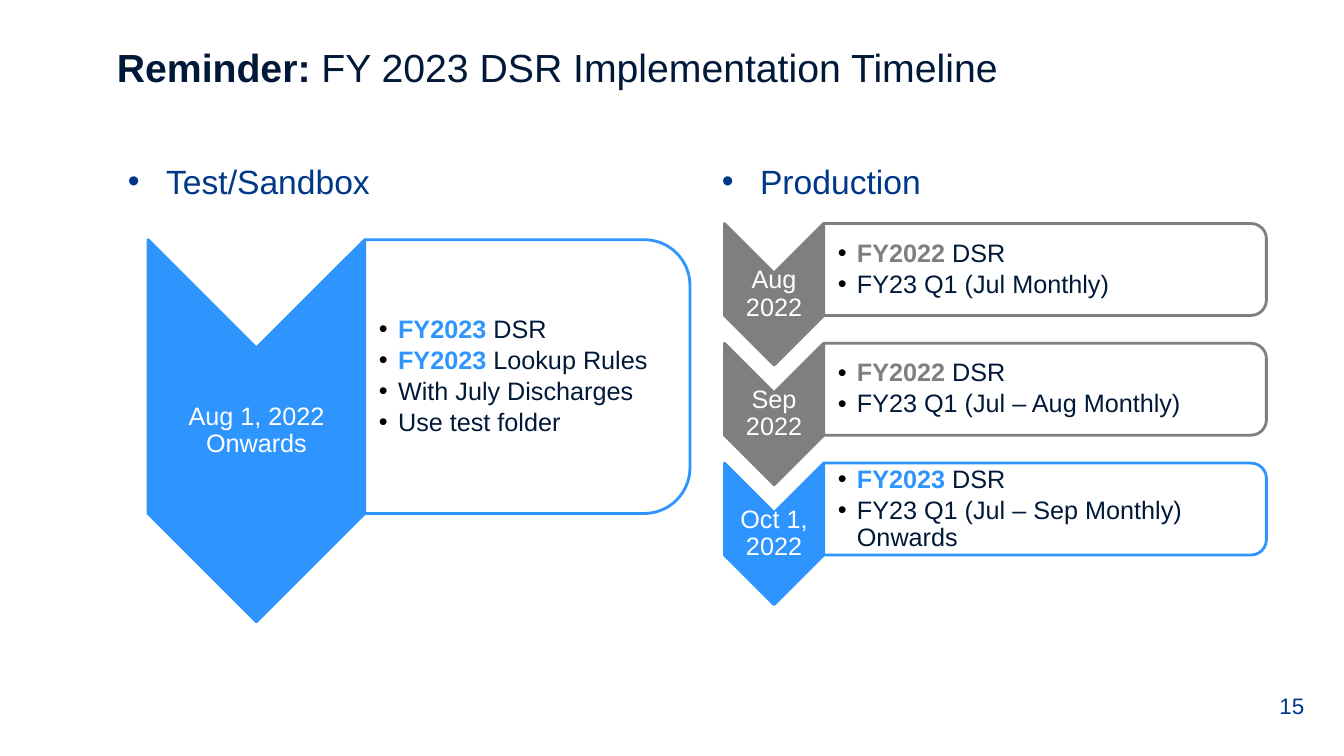
from dataclasses import dataclass

import lxml.etree
import pptx
import pptx.dml.color
import pptx.enum.shapes
import pptx.enum.text
import pptx.oxml.ns
import pptx.util

SHAPES = pptx.enum.shapes.MSO_SHAPE
ALIGN = pptx.enum.text.PP_ALIGN
ANCHOR = pptx.enum.text.MSO_ANCHOR


@dataclass(frozen=True)
class Theme:
    font: str = "Arial"
    ink: str = "001938"
    navy: str = "003889"
    blue: str = "2E95FF"
    gray: str = "7F7F7F"
    white: str = "FFFFFF"
    black: str = "000000"
    title_size: int = 28
    heading_size: int = 24
    step_size: int = 18
    number_size: int = 16
    outline: int = 2


@dataclass(frozen=True)
class Box:
    left: float
    top: float
    width: float
    height: float

    def share(self, left, top, width, height):
        """Return an inner box given in percent of this one."""
        return Box(self.left + self.width * left / 100,
                   self.top + self.height * top / 100,
                   self.width * width / 100, self.height * height / 100)

    def inset(self, margin):
        return Box(self.left, self.top + margin,
                   self.width - margin, self.height - 2 * margin)

    def place(self, shape):
        shape.left, shape.top, shape.width, shape.height = (
            pptx.util.Inches(length)
            for length in (self.left, self.top, self.width, self.height))


THEME = Theme()
SLIDE = Box(0, 0, 13.33, 7.5)
CORNER = 0.167  # radius as a share of the card's short side
CORNER_INSET = 0.29  # share of the radius that keeps text clear of the corner


def color(value):
    return pptx.dml.color.RGBColor.from_string(value)


def add_run(paragraph, text, size, value, bold=False):
    run = paragraph.add_run()
    run.text = text
    run.font.name = THEME.font
    run.font.size = pptx.util.Pt(size)
    run.font.bold = bold
    run.font.color.rgb = color(value)


def add_bullet(paragraph, indent, hanging, value):
    properties = paragraph._p.get_or_add_pPr()
    properties.set("marL", str(pptx.util.Inches(indent)))
    properties.set("indent", str(-pptx.util.Inches(hanging)))
    qualified = pptx.oxml.ns.qn
    bullet_color = lxml.etree.SubElement(properties, qualified("a:buClr"))
    lxml.etree.SubElement(bullet_color, qualified("a:srgbClr"), val=value)
    lxml.etree.SubElement(properties, qualified("a:buFont"), typeface=THEME.font)
    lxml.etree.SubElement(properties, qualified("a:buChar"), char="•")


def add_text_box(slide, box, anchor=ANCHOR.TOP, margins=(0.1, 0.05, 0.1, 0.05)):
    shape = slide.shapes.add_textbox(0, 0, 0, 0)
    box.place(shape)
    frame = shape.text_frame
    frame.word_wrap = True
    frame.vertical_anchor = anchor
    (frame.margin_left, frame.margin_top,
     frame.margin_right, frame.margin_bottom) = map(pptx.util.Inches, margins)
    return frame


def add_turned_shape(slide, kind, box, adjustments, fill, line):
    """Add a shape turned by 90 degrees that fills the box as seen."""
    shape = slide.shapes.add_shape(kind, 0, 0, 0, 0)
    Box(box.left + (box.width - box.height) / 2,
        box.top + (box.height - box.width) / 2,
        box.height, box.width).place(shape)
    shape.rotation = 90
    for index, adjustment in enumerate(adjustments):
        shape.adjustments[index] = adjustment
    shape.shadow.inherit = False
    shape.fill.solid()
    shape.fill.fore_color.rgb = color(fill)
    shape.line.color.rgb = color(line)
    shape.line.width = pptx.util.Pt(THEME.outline)


def add_title(slide, box, lead, rest):
    title = slide.shapes.title
    box.place(title)
    frame = title.text_frame
    frame.auto_size = pptx.enum.text.MSO_AUTO_SIZE.NONE
    frame.vertical_anchor = ANCHOR.TOP
    paragraph = frame.paragraphs[0]
    paragraph.alignment = ALIGN.LEFT
    add_run(paragraph, lead, THEME.title_size, THEME.ink, bold=True)
    add_run(paragraph, rest, THEME.title_size, THEME.ink)


def add_heading(slide, box, text):
    paragraph = add_text_box(slide, box).paragraphs[0]
    add_bullet(paragraph, 0.49, 0.38, THEME.navy)
    paragraph.line_spacing = 1.14
    add_run(paragraph, text, THEME.heading_size, THEME.navy)


def add_step(slide, box, label_share, accent, label, items):
    """Draw a dated chevron whose tip hangs below the box, and its card."""
    label_width = box.width * label_share / 100
    notch = label_width / 2
    chevron = Box(box.left, box.top, label_width, box.height + notch)
    add_turned_shape(slide, SHAPES.CHEVRON, chevron, [0.5], accent, accent)

    label_box = Box(box.left, box.top + notch, label_width, box.height - notch)
    frame = add_text_box(slide, label_box, ANCHOR.MIDDLE, (0.01,) * 4)
    paragraph = frame.paragraphs[0]
    paragraph.alignment = ALIGN.CENTER
    paragraph.line_spacing = 0.9
    add_run(paragraph, label, THEME.step_size, THEME.white)

    card = Box(box.left + label_width, box.top,
               box.width - label_width, box.height)
    add_turned_shape(slide, SHAPES.ROUND_2_SAME_RECTANGLE, card, [CORNER, 0],
                     THEME.white, accent)
    margin = min(card.width, card.height) * CORNER * CORNER_INSET
    frame = add_text_box(slide, card.inset(margin), ANCHOR.MIDDLE,
                         (0.14, 0.01, 0.01, 0.01))
    for index, (year, text) in enumerate(items):
        paragraph = frame.add_paragraph() if index else frame.paragraphs[0]
        add_bullet(paragraph, 0.19, 0.19, THEME.black)
        paragraph.line_spacing = 0.9
        if index:
            paragraph.space_before = pptx.util.Pt(2.7)
        if year:
            add_run(paragraph, year + " ", THEME.step_size, accent, bold=True)
        add_run(paragraph, text, THEME.step_size, THEME.ink)


def add_test_panel(slide, box):
    add_heading(slide, box, "Test/Sandbox")
    add_step(slide, box.share(7.3, 18.3, 96, 56), 40, THEME.blue,
             "Aug 1, 2022 Onwards",
             [("FY2023", "DSR"), ("FY2023", "Lookup Rules"),
              ("", "With July Discharges"), ("", "Use test folder")])


def add_production_panel(slide, box):
    add_heading(slide, box, "Production")
    steps = [
        (THEME.gray, "Aug 2022", "FY2022", "FY23 Q1 (Jul Monthly)"),
        (THEME.gray, "Sep 2022", "FY2022", "FY23 Q1 (Jul – Aug Monthly)"),
        (THEME.blue, "Oct 1, 2022", "FY2023",
         "FY23 Q1 (Jul – Sep Monthly) Onwards"),
    ]
    for row, (accent, label, year, period) in enumerate(steps):
        add_step(slide, box.share(4.2, 15 + 24.5 * row, 96, 18.8), 18.3, accent,
                 label, [(year, "DSR"), ("", period)])


def add_page_number(slide, box, number):
    paragraph = add_text_box(slide, box, ANCHOR.MIDDLE).paragraphs[0]
    add_run(paragraph, number, THEME.number_size, THEME.navy)


def main():
    presentation = pptx.Presentation()
    presentation.slide_width = pptx.util.Inches(SLIDE.width)
    presentation.slide_height = pptx.util.Inches(SLIDE.height)
    title_only = presentation.slide_layouts.get_by_name("Title Only")
    slide = presentation.slides.add_slide(title_only)
    add_title(slide, SLIDE.share(7.95, 5.07, 86.27, 8.8),
              "Reminder:", " FY 2023 DSR Implementation Timeline")
    add_test_panel(slide, SLIDE.share(7.95, 19.87, 42, 64.67))
    add_production_panel(slide, SLIDE.share(52.14, 19.87, 42, 64.67))
    add_page_number(slide, SLIDE.share(94.45, 90.67, 4.73, 5.33), "15")
    presentation.save("out.pptx")


if __name__ == "__main__":
    main()
